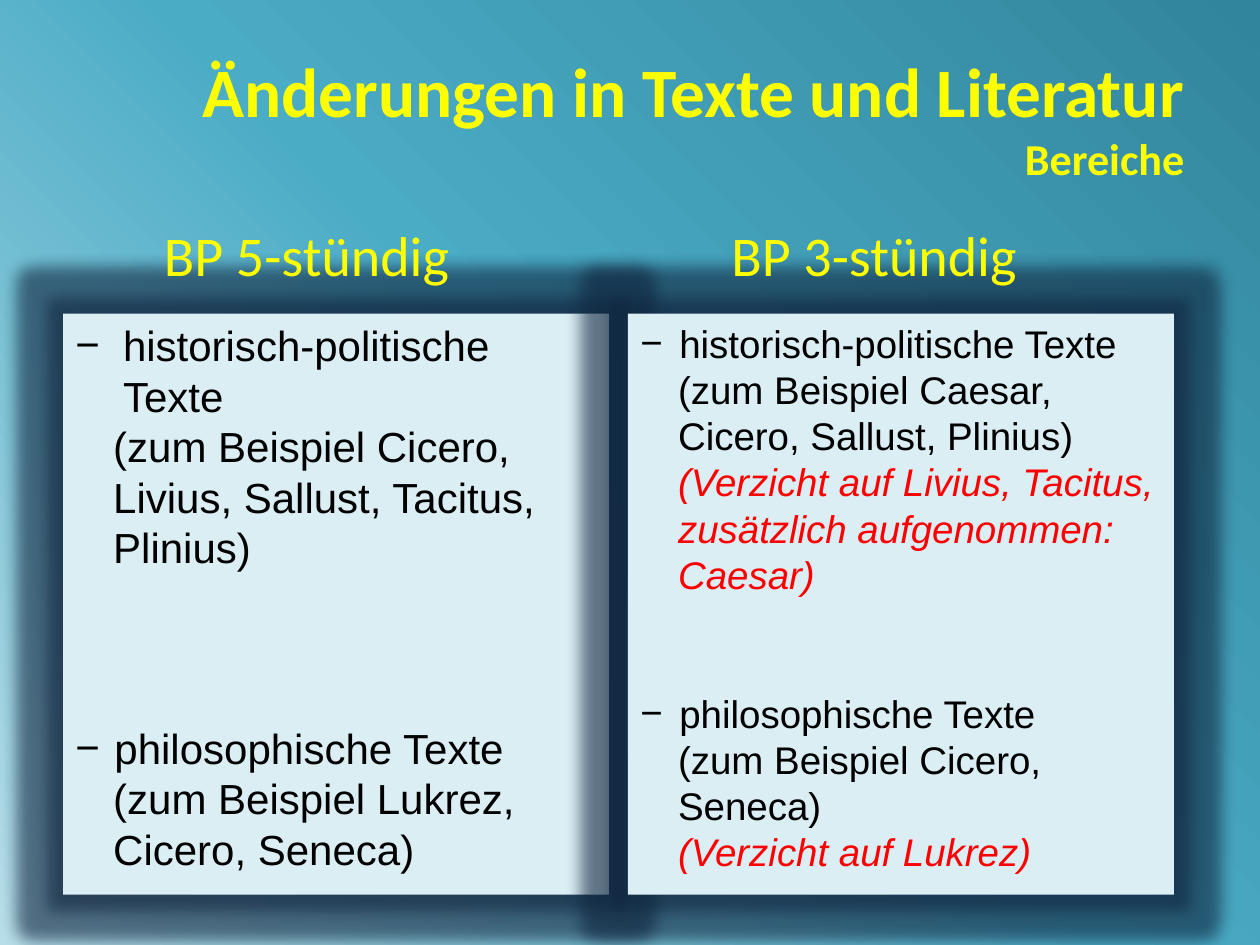
from lxml import etree
from pptx import Presentation
from pptx.dml.color import RGBColor
from pptx.enum.shapes import MSO_SHAPE
from pptx.enum.text import MSO_ANCHOR, PP_ALIGN
from pptx.oxml.ns import qn
from pptx.util import Pt

RECT = MSO_SHAPE.RECTANGLE
TOP, MID = MSO_ANCHOR.TOP, MSO_ANCHOR.MIDDLE
LEFT, RIGHT = PP_ALIGN.LEFT, PP_ALIGN.RIGHT

YELLOW, BLACK, RED = "FFFF00", "000000", "FF0000"
PALE, GLOW = "DBEEF4", "10253F"
STOPS = [(0, "31859C"), (50, "4BACC6"), (100, "B7DEE8")]
TITLE = [("Änderungen in Texte und Literatur", 39.6), ("Bereiche", 25.2)]
HIST, PHIL = "historisch-politische Texte", "philosophische Texte"
DASH = dict(bullet="−", indent=22.3)
NOTE = dict(color=RED, italic=True)
COLS = [
    dict(head="BP 5-stündig", size=24, rows=[
        (HIST, dict(bullet="−", indent=27.2)),
        ("(zum Beispiel Cicero, Livius, Sallust, Tacitus, Plinius)", {}),
        (PHIL, dict(DASH, gap=86)),
        ("(zum Beispiel Lukrez, Cicero, Seneca)", {}),
    ]),
    dict(head="BP 3-stündig", size=22, rows=[
        (HIST, DASH),
        ("(zum Beispiel Caesar, Cicero, Sallust, Plinius)", {}),
        ("(Verzicht auf Livius, Tacitus, zusätzlich aufgenommen: Caesar)", NOTE),
        (PHIL, dict(DASH, gap=53)),
        ("(zum Beispiel Cicero, Seneca)", {}),
        ("(Verzicht auf Lukrez)", NOTE),
    ]),
]
BOX_X, BOX_Y, BOX_W, BOX_H, STEP = 36, 179.3, 312, 332, 322.8
HEAD_X, HEAD_Y = 93.7, 126


def paint(fmt, color):
    if hasattr(fmt, "solid"):
        fmt.solid()
        fmt = fmt.fore_color
    fmt.rgb = RGBColor.from_string(color)


def write(para, text, size, color=BLACK, font="Arial", bold=False,
          italic=False, align=LEFT, indent=21.6, bullet=None, gap=0):
    run = para.add_run()
    run.text = text
    face = run.font
    face.name, face.size, face.bold, face.italic = font, Pt(size), bold, italic
    paint(face.color, color)
    para.alignment, para.line_spacing = align, 1.0
    para.space_before, para.space_after = Pt(gap), Pt(0)
    props = para._p.get_or_add_pPr()
    props.set("marL", str(Pt(indent)))
    props.set("indent", str(Pt(-indent if bullet else 0)))
    if bullet:
        etree.SubElement(props, qn("a:buFont"), typeface="Arial")
        etree.SubElement(props, qn("a:buChar"), char=bullet)


def tint(node, tag, color, **attrs):
    item = etree.SubElement(node, qn(tag), **attrs)
    return etree.SubElement(item, qn("a:srgbClr"), val=color)


def shade(slide):
    fill = slide.background.fill
    fill.gradient()
    fill.gradient_angle = 225
    stops = slide.background._cSld.find(".//" + qn("a:gsLst"))
    for stop in list(stops):
        stops.remove(stop)
    for pos, color in STOPS:
        tint(stops, "a:gs", color, pos=str(pos * 1000))


def panel(slide, left, size, rows):
    box = slide.shapes.add_shape(RECT, Pt(left), Pt(BOX_Y), Pt(BOX_W), Pt(BOX_H))
    paint(box.fill, PALE)
    box.line.fill.background()
    box.shadow.inherit = False
    effects = box._element.spPr.find(qn("a:effectLst"))
    hue = tint(effects, "a:glow", GLOW, rad=str(Pt(18)))
    etree.SubElement(hue, qn("a:alpha"), val="60000")
    frame = box.text_frame
    frame.word_wrap, frame.vertical_anchor = True, TOP
    for i, (text, style) in enumerate(rows):
        para = frame.add_paragraph() if i else frame.paragraphs[0]
        write(para, text, size, **style)


def label(slide, left, text):
    box = slide.shapes.add_textbox(Pt(left), Pt(HEAD_Y), Pt(220), Pt(40))
    frame = box.text_frame
    frame.word_wrap = True
    frame.margin_left = frame.margin_right = 0
    frame.margin_top = frame.margin_bottom = 0
    write(frame.paragraphs[0], text, 32, YELLOW, "Calibri", indent=0)


def main():
    deck = Presentation()
    deck.slide_width, deck.slide_height = Pt(720), Pt(540)
    slide = deck.slides.add_slide(deck.slide_layouts[5])
    shade(slide)

    title = slide.shapes.title
    title.left, title.top, title.width, title.height = Pt(36), Pt(21.6), Pt(648), Pt(90)
    title.text_frame.vertical_anchor = MID
    para = title.text_frame.paragraphs[0]
    for i, (text, size) in enumerate(TITLE):
        if i:
            para.add_line_break()
        write(para, text, size, YELLOW, "Calibri", bold=True, align=RIGHT, indent=0)

    for i, col in enumerate(COLS):
        panel(slide, BOX_X + i * STEP, col["size"], col["rows"])
    for i, col in enumerate(COLS):
        label(slide, HEAD_X + i * (STEP + 1.5), col["head"])
    deck.save("out.pptx")


if __name__ == "__main__":
    main()
